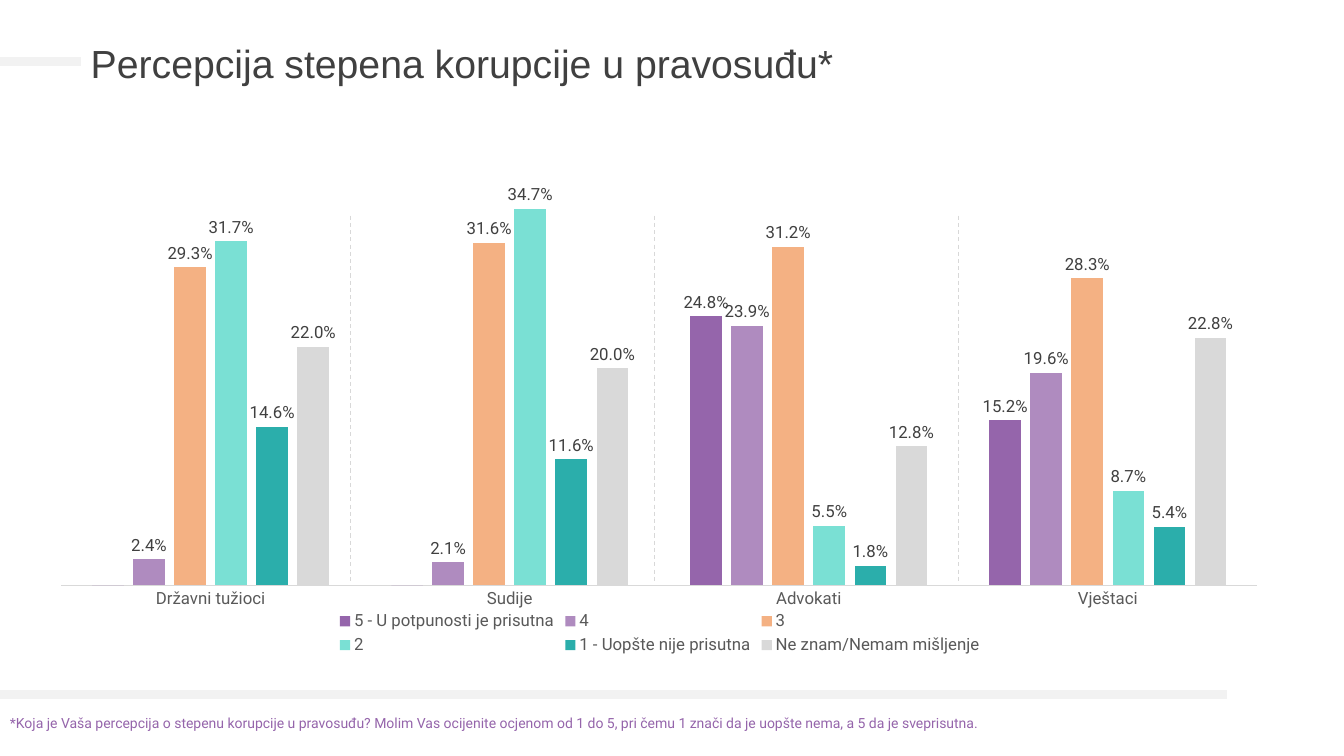
import pptx
import pptx.chart.data
import pptx.dml.color
import pptx.enum.chart
import pptx.enum.dml
import pptx.enum.shapes
import pptx.enum.text
import pptx.oxml
import pptx.oxml.ns
import pptx.util

Inches, Pt = pptx.util.Inches, pptx.util.Pt
XL = pptx.enum.chart

CATEGORIES = ["Državni tužioci", "Sudije", "Advokati", "Vještaci"]
SERIES = [
    ("5 - U potpunosti je prisutna", "9565AB", [0, 0, 0.248, 0.152]),
    ("4", "AF8BBF", [0.024, 0.021, 0.239, 0.196]),
    ("3", "F4B183", [0.293, 0.316, 0.312, 0.283]),
    ("2", "7AE0D4", [0.317, 0.347, 0.055, 0.087]),
    ("1 - Uopšte nije prisutna", "2BAEAB", [0.146, 0.116, 0.018, 0.054]),
    ("Ne znam/Nemam mišljenje", "D9D9D9", [0.22, 0.2, 0.128, 0.228]),
]


def rgb(color):
    return pptx.dml.color.RGBColor.from_string(color)


def write(tf, text, font, size, color, spacing=None, anchor=pptx.enum.text.MSO_ANCHOR.TOP):
    tf.word_wrap = True
    tf.vertical_anchor = anchor
    p = tf.paragraphs[0]
    p.alignment = pptx.enum.text.PP_ALIGN.LEFT
    p.line_spacing = spacing
    r = p.add_run()
    r.text = text
    r.font.name, r.font.size = font, Pt(size)
    r.font.color.rgb = rgb(color)


prs = pptx.Presentation()
prs.slide_width, prs.slide_height = Inches(13.33), Inches(7.5)
s = prs.slides.add_slide(prs.slide_layouts[5])

# Title
title = s.shapes.title
title.left, title.top = Inches(0.8), Inches(0.21)
title.width, title.height = Inches(12.16), Inches(0.88)
write(title.text_frame, "Percepcija stepena korupcije u pravosuđu*", font="Arial", size=28,
      color="404040", spacing=0.9, anchor=pptx.enum.text.MSO_ANCHOR.MIDDLE)

# Clustered columns
data = pptx.chart.data.CategoryChartData(number_format="0.0%")
data.categories = CATEGORIES
for name, color, values in SERIES:
    data.add_series(name, values)
chart = s.shapes.add_chart(XL.XL_CHART_TYPE.COLUMN_CLUSTERED, Inches(0.46), Inches(0.27),
                           Inches(12.17), Inches(6.27), data).chart
chart.has_title = False
chart.font.name, chart.font.size = "Roboto", Pt(12)
chart.font.color.rgb = rgb("000000")

chart.has_legend = True
chart.legend.position = XL.XL_LEGEND_POSITION.BOTTOM
chart.legend.include_in_layout = False

cat_axis = chart.category_axis
cat_axis.major_tick_mark = XL.XL_TICK_MARK.NONE
cat_axis.format.line.color.rgb = rgb("D9D9D9")
cat_axis.format.line.width = Pt(0.75)
for font in (chart.legend.font, cat_axis.tick_labels.font):
    font.name, font.size = "Roboto", Pt(12)
    font.color.rgb = rgb("595959")

val_axis = chart.value_axis
val_axis.visible = False
val_axis.has_major_gridlines = False
val_axis.minimum_scale, val_axis.maximum_scale = 0, 0.5

plot = chart.plots[0]
plot.gap_width, plot.overlap = 197, -30
plot.vary_by_categories = False
ns = pptx.oxml.ns.nsdecls("c")
for series, (name, color, values) in zip(plot.series, SERIES):
    series.format.fill.solid()
    series.format.fill.fore_color.rgb = rgb(color)
    series.invert_if_negative = False
    labels = series.data_labels
    labels.show_value = True
    labels.position = XL.XL_LABEL_POSITION.OUTSIDE_END
    labels.number_format, labels.number_format_is_linked = "0.0%", False
    labels.font.name, labels.font.size = "Roboto", Pt(12)
    labels.font.color.rgb = rgb("404040")
    # Zero columns carry no label
    zeros = [i for i, value in enumerate(values) if value == 0]
    for position, i in enumerate(zeros):
        labels._element.insert(position, pptx.oxml.parse_xml(
            f'<c:dLbl {ns}><c:idx val="{i}"/><c:delete val="1"/></c:dLbl>'))

# Fixed inner plot area
plot_area = chart._chartSpace.chart.plotArea
for layout in plot_area.findall(pptx.oxml.ns.qn("c:layout")):
    plot_area.remove(layout)
box = "".join(f'<c:{tag} val="{value}"/>' for tag, value in [
    ("layoutTarget", "inner"), ("xMode", "edge"), ("yMode", "edge"),
    ("x", 0.012), ("y", 0.025), ("w", 0.975), ("h", 0.858)])
plot_area.insert(0, pptx.oxml.parse_xml(
    f"<c:layout {ns}><c:manualLayout>{box}</c:manualLayout></c:layout>"))

# Title and footer bars, then dashed dividers between the groups
bars = [(0, 0.61, 0.8, 0.61, "F2F2F2", 6, None), (0, 6.89, 12.17, 6.89, "F2F2F2", 6, None)]
dividers = [(x, 2.14, x, 5.79, "D8D8D8", 0.75, pptx.enum.dml.MSO_LINE.DASH)
            for x in (3.48, 6.49, 9.51)]
for x1, y1, x2, y2, color, width, dash in bars + dividers:
    line = s.shapes.add_connector(pptx.enum.shapes.MSO_CONNECTOR.STRAIGHT,
                                  Inches(x1), Inches(y1), Inches(x2), Inches(y2))
    line.line.color.rgb = rgb(color)
    line.line.width = Pt(width)
    line.line.dash_style = dash
    line._element.spPr.append(pptx.oxml.parse_xml(
        f'<a:effectLst {pptx.oxml.ns.nsdecls("a")}/>'))

# Footnote
note = s.shapes.add_textbox(Inches(0), Inches(7.04), Inches(10.29), Inches(0.27))
note.text_frame.auto_size = pptx.enum.text.MSO_AUTO_SIZE.SHAPE_TO_FIT_TEXT
write(note.text_frame,
      "*Koja je Vaša percepcija o stepenu korupcije u pravosuđu? Molim Vas ocijenite ocjenom "
      "od 1 do 5, pri čemu 1 znači da je uopšte nema, a 5 da je sveprisutna.",
      font="Roboto", size=10, color="9565AB")

prs.save("out.pptx")
